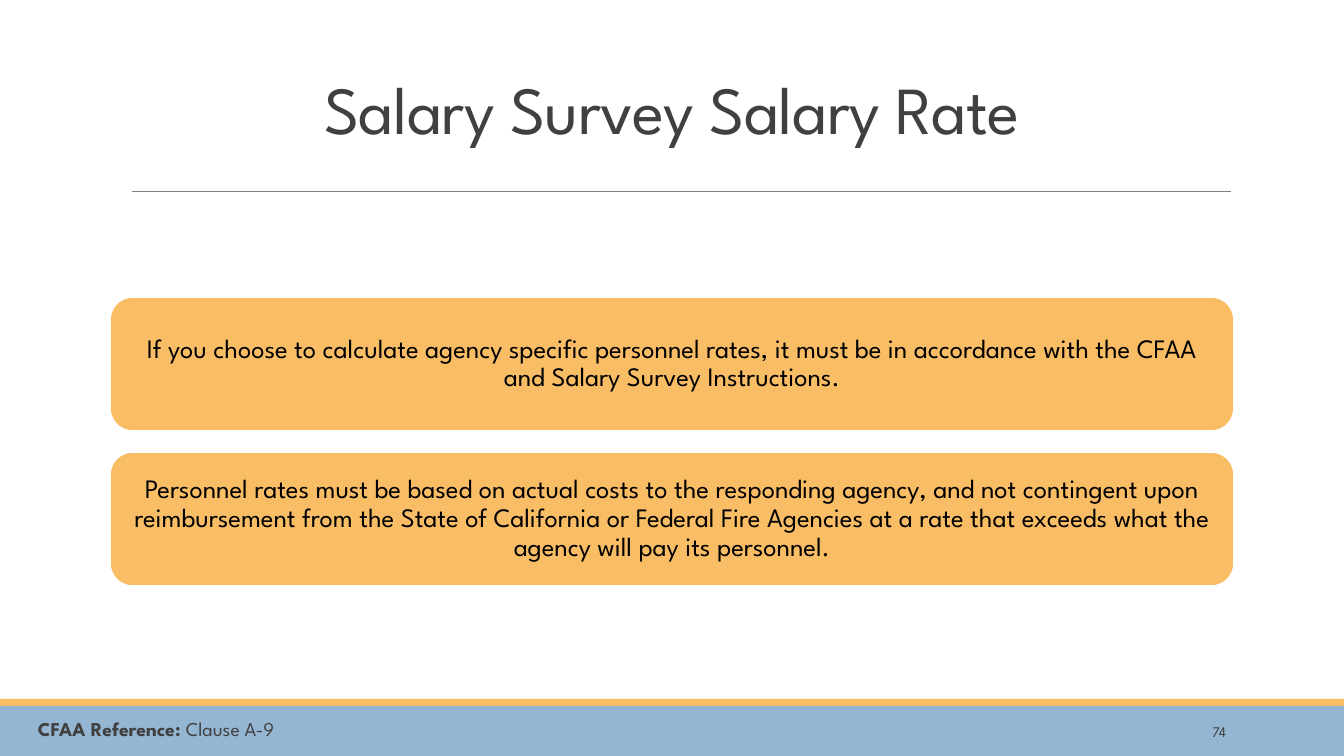
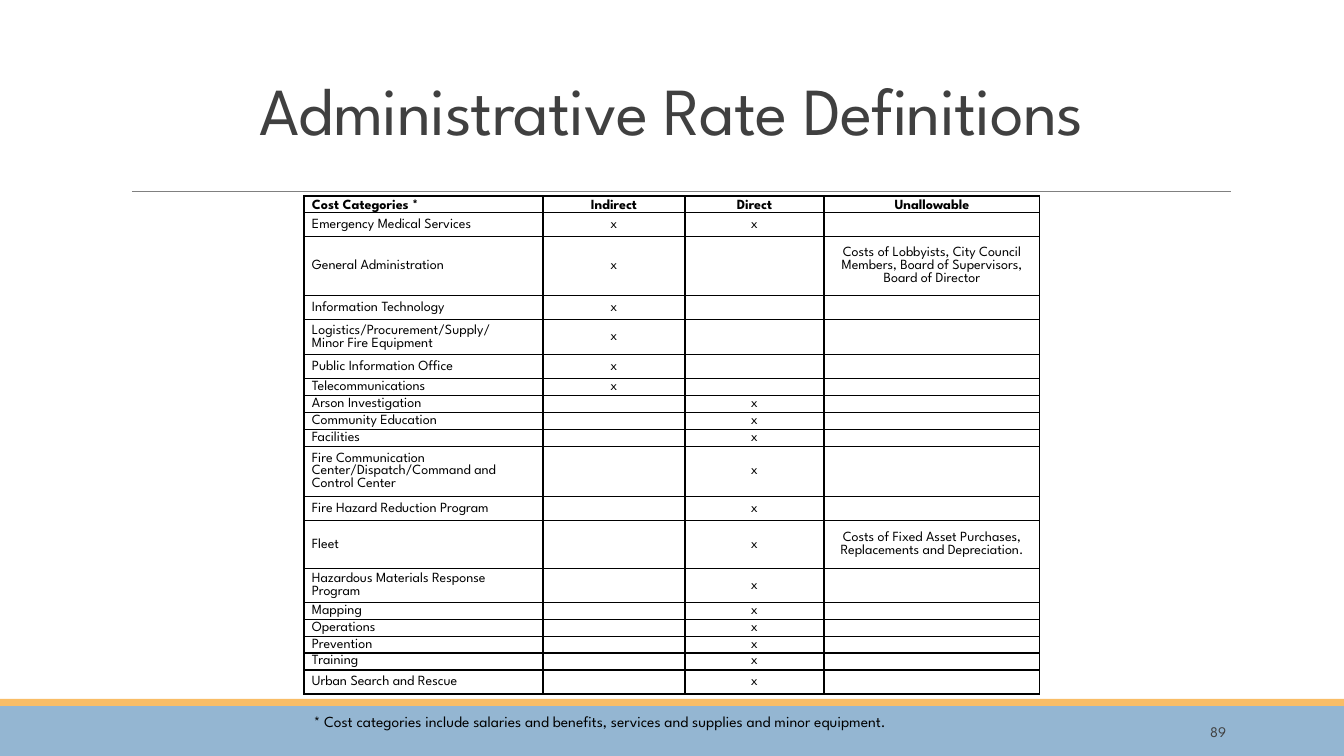
from dataclasses import dataclass
from typing import Any

from lxml import etree
from pptx import Presentation
from pptx.dml.color import RGBColor
from pptx.enum.shapes import MSO_CONNECTOR, MSO_SHAPE
from pptx.enum.text import MSO_ANCHOR, MSO_AUTO_SIZE, PP_ALIGN
from pptx.oxml.ns import qn
from pptx.util import Emu, Pt

RECT, ROUNDED = MSO_SHAPE.RECTANGLE, MSO_SHAPE.ROUNDED_RECTANGLE
STRAIGHT = MSO_CONNECTOR.STRAIGHT
TOP, MIDDLE, BOTTOM = MSO_ANCHOR.TOP, MSO_ANCHOR.MIDDLE, MSO_ANCHOR.BOTTOM
LEFT, CENTER, RIGHT = PP_ALIGN.LEFT, PP_ALIGN.CENTER, PP_ALIGN.RIGHT
NO_FIT = MSO_AUTO_SIZE.NONE
EMU_PER_PX = 914400 / 100.8
SLIDE_W, SLIDE_H = 1344, 756


@dataclass(frozen=True)
class Theme:
    """Colours, font and type sizes of the deck."""
    font: str = "League Spartan"
    blue: str = "94B6D2"
    orange: str = "F9BD66"
    white: str = "FFFFFF"
    rule: str = "808080"
    grey: str = "404040"
    black: str = "000000"
    title: float = 48
    statement: float = 19
    reference: float = 14
    note: float = 11
    number: float = 10.5
    cell: float = 10


@dataclass(frozen=True)
class Box:
    """Position and size in px."""
    x: int
    y: int
    w: int
    h: int


@dataclass(frozen=True)
class Run:
    """A piece of text in one format."""
    text: str
    size: float
    color: str
    bold: bool = False


@dataclass(frozen=True)
class Cost:
    """A table row: category, height, marks and unallowable costs."""
    name: str
    height: int
    indirect: bool = False
    direct: bool = False
    unallowable: str = ""


THEME = Theme()
BLUE_BAND = Box(0, 706, SLIDE_W, 50)
ORANGE_BAND = Box(0, 699, SLIDE_W, 7)
NUMBER_BOX = Box(1092, 712, 144, 40)
RULE_X1, RULE_X2, RULE_Y = 132, 1231, 191
STATEMENT_BOX, STATEMENT_PITCH = Box(110, 297, 1124, 134), 155
STATEMENTS = (
    "If you choose to calculate agency specific personnel rates, it must be in "
    "accordance with the CFAA and Salary Survey Instructions.",
    "Personnel rates must be based on actual costs to the responding agency, and not "
    "contingent upon reimbursement from the State of California or Federal Fire "
    "Agencies at a rate that exceeds what the agency will pay its personnel.",
)
HEADINGS = ("Cost Categories *", "Indirect", "Direct", "Unallowable")
HEADING_H = 16
COLUMN_WIDTHS = (239, 142, 139, 216)
TABLE_X, TABLE_Y = 304, 196
COSTS = (
    Cost("Emergency Medical Services", 24, indirect=True, direct=True),
    Cost("General Administration", 59, indirect=True,
         unallowable="Costs of Lobbyists, City Council Members, Board of Supervisors, "
                     "Board of Director"),
    Cost("Information Technology", 24, indirect=True),
    Cost("Logistics/Procurement/Supply/\nMinor Fire Equipment", 35, indirect=True),
    Cost("Public Information Office", 24, indirect=True),
    Cost("Telecommunications", 16, indirect=True),
    Cost("Arson Investigation", 16, direct=True),
    Cost("Community Education", 16, direct=True),
    Cost("Facilities", 17, direct=True),
    Cost("Fire Communication Center/Dispatch/Command and Control Center", 48, direct=True),
    Cost("Fire Hazard Reduction Program", 24, direct=True),
    Cost("Fleet", 48, direct=True,
         unallowable="Costs of Fixed Asset Purchases, Replacements and Depreciation."),
    Cost("Hazardous Materials Response Program", 32, direct=True),
    Cost("Mapping", 16, direct=True),
    Cost("Operations", 16, direct=True),
    Cost("Prevention", 16, direct=True),
    Cost("Training", 17, direct=True),
    Cost("Urban Search and Rescue", 24, direct=True),
)


def px(n: int) -> Emu:
    """Turn px into EMU."""
    return Emu(round(n * EMU_PER_PX))


def rgb(color: str) -> RGBColor:
    """Turn a hex string into a colour."""
    return RGBColor.from_string(color)


def place(box: Box) -> tuple[Emu, ...]:
    """Return a box as EMU arguments."""
    return px(box.x), px(box.y), px(box.w), px(box.h)


def apply(target: Any, formats: dict[str, Any]) -> None:
    """Set attributes from a dict."""
    for name, value in formats.items():
        setattr(target, name, value)


def write(p: Any, runs: tuple[Run, ...], align: Any = LEFT, spacing: float = 1.0) -> None:
    """Write formatted runs into a paragraph."""
    apply(p, {"alignment": align, "line_spacing": spacing})
    for run in runs:
        r = p.add_run()
        r.text = run.text
        apply(r.font, {"name": THEME.font, "size": Pt(run.size), "bold": run.bold})
        r.font.color.rgb = rgb(run.color)


def add_text(s: Any, box: Box, runs: tuple[Run, ...], align: Any = LEFT,
             anchor: Any = TOP) -> None:
    """Add a wrapping text box."""
    tf = s.shapes.add_textbox(*place(box)).text_frame
    apply(tf, {"word_wrap": True, "vertical_anchor": anchor})
    write(tf.paragraphs[0], runs, align)


def add_panel(s: Any, kind: Any, box: Box, color: str) -> Any:
    """Add a filled shape with no line or shadow."""
    sp = s.shapes.add_shape(kind, *place(box))
    sp.shadow.inherit = False
    sp.fill.solid()
    sp.fill.fore_color.rgb = rgb(color)
    sp.line.fill.background()
    return sp


def add_slide(prs: Any, title: str, title_box: Box, number: int) -> Any:
    """Add a slide with title, rule, bands and number."""
    s = prs.slides.add_slide(prs.slide_layouts.get_by_name("Title Only"))
    sp = s.shapes.title
    apply(sp, dict(zip(("left", "top", "width", "height"), place(title_box))))
    tf = sp.text_frame
    apply(tf, {"word_wrap": True, "vertical_anchor": BOTTOM, "auto_size": NO_FIT})
    p = tf.paragraphs[0]
    write(p, (Run(title, THEME.title, THEME.grey),), CENTER, 0.85)
    p.runs[0].font._element.set("spc", "-50")
    add_panel(s, RECT, BLUE_BAND, THEME.blue)
    add_panel(s, RECT, ORANGE_BAND, THEME.orange)
    rule = s.shapes.add_connector(STRAIGHT, px(RULE_X1), px(RULE_Y), px(RULE_X2), px(RULE_Y))
    rule.line.color.rgb = rgb(THEME.rule)
    rule.line.width = Pt(0.5)
    etree.SubElement(rule._element.spPr, qn("a:effectLst"))
    add_text(s, NUMBER_BOX, (Run(str(number), THEME.number, THEME.grey),), RIGHT, MIDDLE)
    return s


def add_statement(s: Any, box: Box, text: str) -> None:
    """Add a rounded panel holding a statement."""
    sp = add_panel(s, ROUNDED, box, THEME.orange)
    sp.line.color.rgb = rgb(THEME.white)
    sp.line.width = Pt(1.25)
    tf = sp.text_frame
    margins = dict.fromkeys(("margin_left", "margin_top", "margin_right", "margin_bottom"), px(8))
    apply(tf, {"word_wrap": True, "vertical_anchor": MIDDLE, **margins})
    write(tf.paragraphs[0], (Run(text, THEME.statement, THEME.black),), CENTER, 0.9)


def border_cell(cell: Any) -> None:
    """Draw thin black borders round a cell."""
    tc_pr = cell._tc.get_or_add_tcPr()
    for side in ("lnL", "lnR", "lnT", "lnB"):
        ln = etree.SubElement(tc_pr, qn(f"a:{side}"), w=str(Pt(1)))
        fill = etree.SubElement(ln, qn("a:solidFill"))
        etree.SubElement(fill, qn("a:srgbClr"), val=THEME.black)


def fill_cell(cell: Any, text: str, align: Any, heading: bool) -> None:
    """Format one table cell and write its text."""
    border_cell(cell)
    cell.fill.background()
    apply(cell, {"margin_left": px(8), "margin_right": px(8), "margin_top": 0,
                 "margin_bottom": 0, "vertical_anchor": BOTTOM if heading else MIDDLE})
    tf = cell.text_frame
    for i, line in enumerate(text.split("\n")):
        p = tf.add_paragraph() if i else tf.paragraphs[0]
        runs = (Run(line, THEME.cell, THEME.black, heading),) if line else ()
        write(p, runs, align)
        if not line:
            end = etree.SubElement(p._p, qn("a:endParaRPr"), sz=str(int(THEME.cell * 100)))
            etree.SubElement(end, qn("a:latin"), typeface=THEME.font)


def add_cost_table(s: Any) -> None:
    """Add the table of cost categories."""
    rows = [HEADINGS] + [(c.name, "x" * c.indirect, "x" * c.direct, c.unallowable)
                         for c in COSTS]
    heights = [HEADING_H] + [c.height for c in COSTS]
    box = Box(TABLE_X, TABLE_Y, sum(COLUMN_WIDTHS), sum(heights))
    table = s.shapes.add_table(len(rows), len(HEADINGS), *place(box)).table
    table.horz_banding = False
    for column, width in zip(table.columns, COLUMN_WIDTHS):
        column.width = px(width)
    for i, (texts, height) in enumerate(zip(rows, heights)):
        table.rows[i].height = px(height)
        for j, text in enumerate(texts):
            fill_cell(table.cell(i, j), text, CENTER if j else LEFT, i == 0)


def add_salary_slide(prs: Any) -> None:
    """Add the slide on salary rates."""
    s = add_slide(prs, "Salary Survey Salary Rate", Box(168, 39, 1008, 114), 74)
    add_text(s, Box(28, 712, 454, 34),
             (Run("CFAA Reference: ", THEME.reference, THEME.grey, True),
              Run("Clause A-9", THEME.reference, THEME.grey)))
    b = STATEMENT_BOX
    for i, text in enumerate(STATEMENTS):
        add_statement(s, Box(b.x, b.y + i * STATEMENT_PITCH, b.w, b.h), text)


def add_definitions_slide(prs: Any) -> None:
    """Add the slide on administrative rates."""
    s = add_slide(prs, "Administrative Rate Definitions", Box(57, 50, 1229, 104), 89)
    add_cost_table(s)
    note = ("* Cost categories include salaries and benefits, services and supplies "
            "and minor equipment.")
    add_text(s, Box(TABLE_X, 707, sum(COLUMN_WIDTHS), 29),
             (Run(note, THEME.note, THEME.black),))


def main() -> None:
    """Build and save the deck."""
    prs = Presentation()
    apply(prs, {"slide_width": px(SLIDE_W), "slide_height": px(SLIDE_H)})
    add_salary_slide(prs)
    add_definitions_slide(prs)
    prs.save("out.pptx")


if __name__ == "__main__":
    main()
